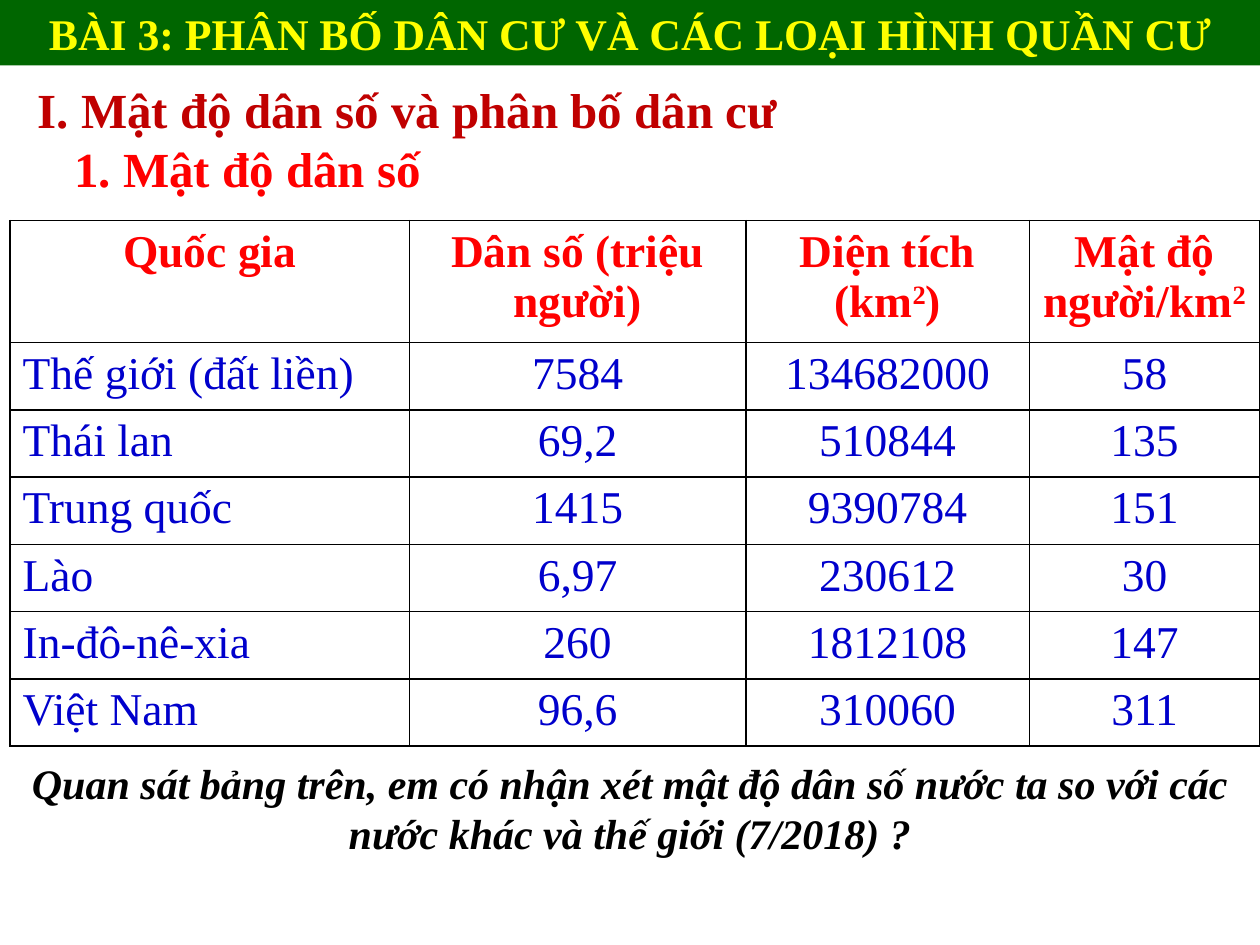
from dataclasses import dataclass

from lxml.etree import SubElement
from pptx import Presentation
from pptx.dml.color import RGBColor
from pptx.enum.shapes import MSO_SHAPE
from pptx.enum.text import MSO_ANCHOR, MSO_AUTO_SIZE, PP_ALIGN
from pptx.oxml.ns import qn
from pptx.util import Inches, Pt


@dataclass(frozen=True)
class Theme:
    font: str = "Times New Roman"
    banner: str = "006600"
    title: str = "FFFF00"
    heading: str = "C00000"
    accent: str = "FF0000"
    body: str = "0000CC"
    ink: str = "000000"
    title_size: int = 25
    heading_size: int = 28
    table_size: int = 26
    question_size: int = 24


class SlideBuilder:
    def __init__(self, prs, theme):
        self.theme = theme
        self.s = prs.slides.add_slide(prs.slide_layouts[6])

    def run(self, p, text, color, size, bold=True, italic=False, superscript=False):
        r = p.add_run()
        r.text = text
        fmt = {"name": self.theme.font, "size": Pt(size), "bold": bold, "italic": italic}
        for name, value in fmt.items():
            setattr(r.font, name, value)
        r.font.color.rgb = RGBColor.from_string(color)
        if superscript:
            r._r.get_or_add_rPr().set("baseline", "30000")

    def banner(self, box, text):
        sp = self.s.shapes.add_shape(MSO_SHAPE.RECTANGLE, *map(Inches, box))
        sp.shadow.inherit = False
        sp.fill.solid()
        sp.fill.fore_color.rgb = RGBColor.from_string(self.theme.banner)
        sp.line.fill.background()
        tf = sp.text_frame
        fmt = {"word_wrap": True, "vertical_anchor": MSO_ANCHOR.MIDDLE,
               "auto_size": MSO_AUTO_SIZE.SHAPE_TO_FIT_TEXT}
        for name, value in fmt.items():
            setattr(tf, name, value)
        p = tf.paragraphs[0]
        p.alignment = PP_ALIGN.CENTER
        self.run(p, text, self.theme.title, self.theme.title_size)

    def text(self, box, lines, size, align=PP_ALIGN.LEFT, wrap=True, italic=False):
        """Each line is (text, colour, left indent in inches)."""
        tf = self.s.shapes.add_textbox(*map(Inches, box)).text_frame
        tf.word_wrap = wrap
        tf.auto_size = MSO_AUTO_SIZE.SHAPE_TO_FIT_TEXT
        for i, (text, color, indent) in enumerate(lines):
            p = tf.add_paragraph() if i else tf.paragraphs[0]
            p.alignment = align
            if indent:
                p._p.get_or_add_pPr().set("marL", str(Inches(indent)))
            self.run(p, text, color, size, italic=italic)

    def border(self, cell):
        tcPr = cell._tc.get_or_add_tcPr()
        for side in ("a:lnL", "a:lnR", "a:lnT", "a:lnB"):
            ln = SubElement(tcPr, qn(side), w=str(Pt(1)))
            fill = SubElement(ln, qn("a:solidFill"))
            SubElement(fill, qn("a:srgbClr"), val=self.theme.ink)

    def table(self, box, widths, header_height, rows):
        shape = self.s.shapes.add_table(len(rows), len(widths), *map(Inches, box))
        table = shape.table
        table.first_row = table.horz_banding = False
        for column, width in zip(table.columns, widths):
            column.width = Inches(width)
        row_height = (box[3] - header_height) / (len(rows) - 1)
        for i, values in enumerate(rows):
            header = i == 0
            table.rows[i].height = Inches(header_height if header else row_height)
            color = self.theme.accent if header else self.theme.body
            for j, value in enumerate(values):
                cell = table.cell(i, j)
                self.border(cell)
                cell.fill.background()
                p = cell.text_frame.paragraphs[0]
                p.alignment = PP_ALIGN.CENTER if header or j else PP_ALIGN.LEFT
                # A caret on each side marks a superscript
                for k, part in enumerate(value.split("^")):
                    if part:
                        self.run(p, part, color, self.theme.table_size,
                                 bold=header, superscript=k % 2 == 1)


ROWS = [
    ("Quốc gia", "Dân số (triệu người)", "Diện tích (km^2^)", "Mật độ người/km^2^"),
    ("Thế giới (đất liền)", "7584", "134682000", "58"),
    ("Thái lan", "69,2", "510844", "135"),
    ("Trung quốc", "1415", "9390784", "151"),
    ("Lào", "6,97", "230612", "30"),
    ("In-đô-nê-xia", "260", "1812108", "147"),
    ("Việt Nam", "96,6", "310060", "311"),
]


def main():
    prs = Presentation()
    prs.slide_width, prs.slide_height = Inches(10), Inches(7.5)
    theme = Theme()
    slide = SlideBuilder(prs, theme)

    # Lesson title
    slide.banner((0, 0, 10, 0.52), "BÀI 3: PHÂN BỐ DÂN CƯ VÀ CÁC LOẠI HÌNH QUẦN CƯ")

    # Section headings
    slide.text((0.2, 0.58, 6.14, 1.04), [
        ("I. Mật độ dân số và phân bố dân cư", theme.heading, 0),
        ("1. Mật độ dân số", theme.accent, 0.29),
    ], theme.heading_size, wrap=False)

    # Population density table
    slide.table((0.08, 1.75, 9.92, 4.17), (3.17, 2.67, 2.25, 1.83), 0.97, ROWS)

    # Question
    slide.text((0, 5.96, 10, 0.91), [
        ("Quan sát bảng trên, em có nhận xét mật độ dân số nước ta so với các "
         "nước khác và thế giới (7/2018) ?", theme.ink, 0),
    ], theme.question_size, align=PP_ALIGN.CENTER, italic=True)

    prs.save("out.pptx")


if __name__ == "__main__":
    main()
